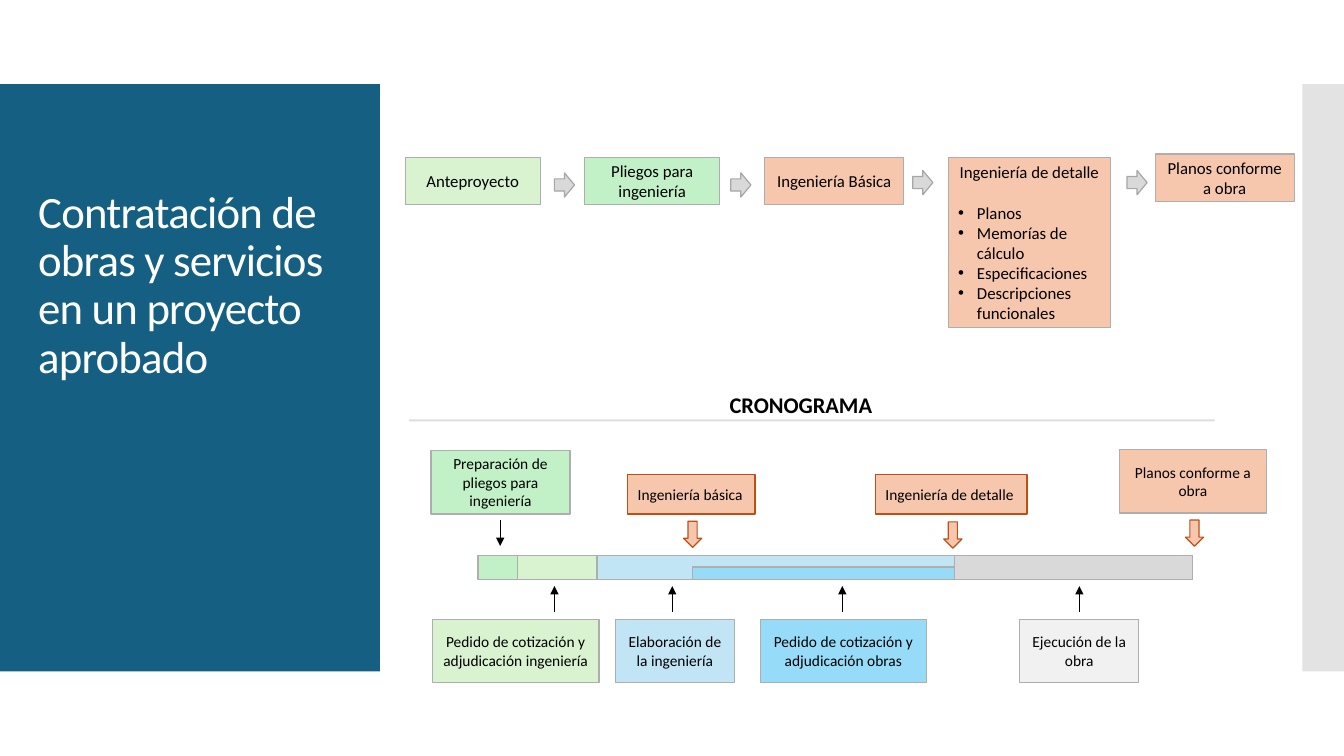
from lxml import etree
from pptx import Presentation
from pptx.dml.color import RGBColor
from pptx.enum import shapes as sh, text as tx
from pptx.oxml import ns
from pptx.util import Pt

BLUE = RGBColor(0x15, 0x60, 0x82)
WHITE = RGBColor(0xFF, 0xFF, 0xFF)
BLACK = RGBColor(0, 0, 0)
MINT = RGBColor(0xC2, 0xF1, 0xC8)
GREEN = RGBColor(0xD9, 0xF2, 0xD0)
PALE = RGBColor(0xC1, 0xE5, 0xF5)
SKY = RGBColor(0x96, 0xDC, 0xF8)
PEACH = RGBColor(0xF6, 0xC6, 0xAD)
RUST = RGBColor(0xC0, 0x4F, 0x15)
GRAY = RGBColor(0xD9, 0xD9, 0xD9)
LIGHT = RGBColor(0xF1, 0xF1, 0xF1)
EDGE = RGBColor(0xAE, 0xAE, 0xAE)
DARK = RGBColor(0xA6, 0xA6, 0xA6)
SIDE = RGBColor(0xC8, 0xC8, 0xC8)
RULE = RGBColor(0xBF, 0xBF, 0xBF)

RECT = sh.MSO_SHAPE.RECTANGLE
RIGHT = sh.MSO_SHAPE.RIGHT_ARROW
DOWN = sh.MSO_SHAPE.DOWN_ARROW
MID = tx.MSO_ANCHOR.MIDDLE
LEFT, CENTER = tx.PP_ALIGN.LEFT, tx.PP_ALIGN.CENTER

BAR_X, BAR_Y, BAR_H, UNIT = 341.5, 396.7, 17.3, 28.35


def sub(node, tag, **attrs):
    return etree.SubElement(node, ns.qn(tag), attrs)


def fade(node):
    """Make the solid colour inside node half transparent."""
    sub(node.find(".//" + ns.qn("a:srgbClr")), "a:alpha", val="50000")


def block(slide, kind, x, y, w, h, fill, edge=None):
    shape = slide.shapes.add_shape(kind, Pt(x), Pt(y), Pt(w), Pt(h))
    shape.shadow.inherit = False
    shape.fill.solid()
    shape.fill.fore_color.rgb = fill
    if edge is None:
        shape.line.fill.background()
    else:
        shape.line.color.rgb = edge
        shape.line.width = Pt(0.85)
    return shape


def write(par, words, size, color=BLACK, align=CENTER):
    par.alignment = align
    run = par.add_run()
    run.text = words
    run.font.name = "Calibri"
    run.font.size = Pt(size)
    run.font.color.rgb = color
    return run


def box(slide, x, y, w, h, fill, words, size, edge=EDGE, align=CENTER):
    frame = block(slide, RECT, x, y, w, h, fill, edge).text_frame
    frame.word_wrap = True
    frame.vertical_anchor = MID
    write(frame.paragraphs[0], words, size, align=align)
    return frame


def label(slide, x, y, w, h, words, size, color, align, anchor):
    frame = slide.shapes.add_textbox(Pt(x), Pt(y), Pt(w), Pt(h)).text_frame
    frame.word_wrap = True
    frame.vertical_anchor = anchor
    par = frame.paragraphs[0]
    return par, write(par, words, size, color, align)


def bullet(frame, words, size):
    par = frame.add_paragraph()
    write(par, words, size, align=LEFT)
    props = par._p.get_or_add_pPr()
    props.set("marL", str(Pt(13.5)))
    props.set("indent", str(-Pt(13.5)))
    sub(props, "a:buFont", typeface="Arial")
    sub(props, "a:buChar", char="•")


def line(slide, x1, y1, x2, y2, color, width):
    link = slide.shapes.add_connector(
        sh.MSO_CONNECTOR.STRAIGHT, Pt(x1), Pt(y1), Pt(x2), Pt(y2))
    link.line.color.rgb = color
    link.line.width = Pt(width)
    sub(link._element.spPr, "a:effectLst")
    return link


def arrow(slide, x, y1, y2):
    link = line(slide, x, y1, x, y2, BLACK, 0.75)
    sub(link.line._get_or_add_ln(), "a:tailEnd", type="triangle")


def panels(slide):
    block(slide, RECT, 0, 60, 271.4, 419.6, BLUE)
    side = block(slide, RECT, 930.2, 60, 29.8, 419.6, SIDE)
    fade(side._element.spPr)
    par, run = label(slide, 20.2, 90, 223.2, 187.2,
                     "Contratación de obras y servicios en un proyecto aprobado",
                     32, WHITE, LEFT, tx.MSO_ANCHOR.BOTTOM)
    par.line_spacing = 0.9
    run._r.get_or_add_rPr().set("spc", "-60")


def flow(slide):
    """Draw the row of project documents."""
    for x, y, w, fill, words in (
            (289.4, 112.3, 96.6, GREEN, "Anteproyecto"),
            (417.6, 112.3, 96.6, MINT, "Pliegos para ingeniería"),
            (546.2, 112.3, 99.4, PEACH, "Ingeniería Básica"),
            (825.1, 110, 99.4, PEACH, "Planos conforme a obra")):
        box(slide, x, y, w, 34, fill, words, 12)
    detail = box(slide, 677.3, 112.3, 116, 121.9, PEACH,
                 "Ingeniería de detalle", 12)
    detail.paragraphs[0].space_after = Pt(14.6)
    for words in ("Planos", "Memorías de cálculo", "Especificaciones",
                  "Descripciones funcionales"):
        bullet(detail, words, 12)
    for x, y in ((396, 123.5), (522, 123.5), (652, 121.8), (805, 121.8)):
        block(slide, RIGHT, x, y, 14.4, 17.3, GRAY, DARK)


def chart(slide):
    """Draw the timeline with the labels above and below it."""
    _, head = label(slide, 502.6, 275, 139, 28, "CRONOGRAMA", 16, BLACK,
                    CENTER, MID)
    head.font.bold = True
    rule = line(slide, 292.3, 300.3, 867.6, 300.3, RULE, 1.35)
    fade(rule._element.spPr)

    x = BAR_X
    for units, fill in ((1, MINT), (2, GREEN), (9, PALE), (6, GRAY)):
        block(slide, RECT, x, BAR_Y, units * UNIT, BAR_H, fill, EDGE)
        x += units * UNIT
    works = BAR_X + 12 * UNIT
    block(slide, RECT, 494.6, 405, works - 494.6, 9, SKY, EDGE)

    for x, w, fill, words, tip in (
            (308.9, 119, GREEN,
             "Pedido de cotización y adjudicación ingeniería", 396),
            (439.6, 85, PALE, "Elaboración de la ingeniería", 480.2),
            (543, 119, SKY, "Pedido de cotización y adjudicación obras", 601.7),
            (728.4, 85, LIGHT, "Ejecución de la obra", 771)):
        box(slide, x, 442.3, w, 45.3, fill, words, 11)
        arrow(slide, tip, 437, 418.6)

    box(slide, 307.8, 321.8, 99.4, 45.4, MINT,
        "Preparación de pliegos para ingeniería", 11)
    arrow(slide, 357.3, 371.5, 390)
    box(slide, 799.6, 321.1, 105.1, 45.4, PEACH, "Planos conforme a obra", 11)
    for x, w, words in ((448.4, 91, "Ingeniería básica"),
                        (625.4, 108.2, "Ingeniería de detalle")):
        box(slide, x, 338.9, w, 28.3, PEACH, words, 11, RUST, LEFT)
    for x, y in ((488.2, 372.3), (674.1, 372.8), (846.7, 371.5)):
        block(slide, DOWN, x, y, 13, 18.7, PEACH, RUST)


def main():
    deck = Presentation()
    deck.slide_width, deck.slide_height = Pt(960), Pt(540)
    slide = deck.slides.add_slide(deck.slide_layouts[6])
    panels(slide)
    flow(slide)
    chart(slide)
    deck.save("out.pptx")


if __name__ == "__main__":
    main()
